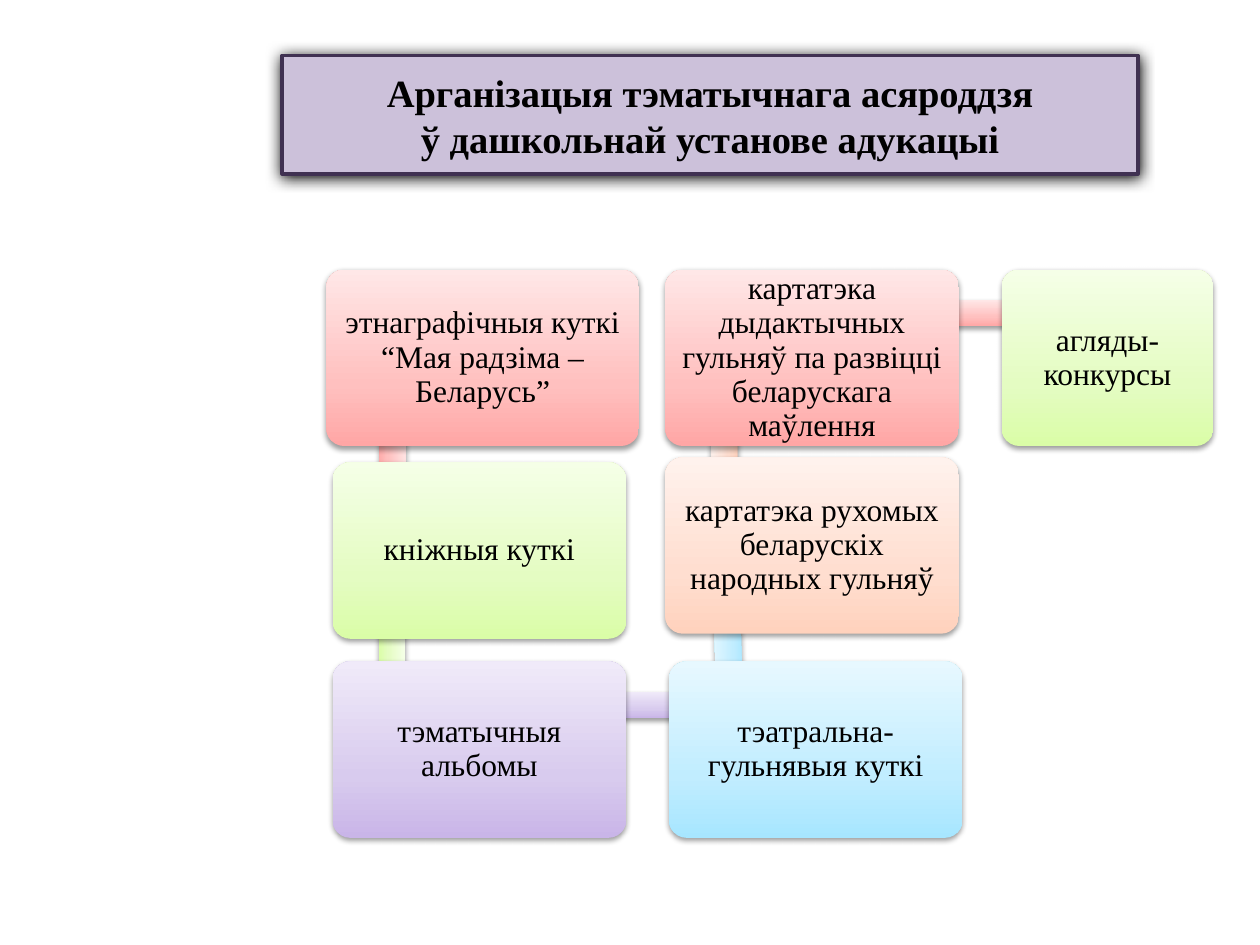
import copy

import pptx
import pptx.dml.color
import pptx.enum.shapes
import pptx.enum.text
import pptx.oxml
import pptx.oxml.ns
import pptx.util

Inches = pptx.util.Inches
Pt = pptx.util.Pt
qn = pptx.oxml.ns.qn
SHAPES = pptx.enum.shapes.MSO_SHAPE
TEXT = pptx.enum.text

FONT = "Times New Roman"
BAR_THICKNESS = 0.21
CARD_HEIGHT = 1.4

# Gradient colours from bottom to top
RED = ("FFA6A5", "FFC0BF", "FFE7E7")
GREEN = ("DAFDA7", "E4FCC2", "F5FFE7")
VIOLET = ("C9B5E8", "D8CBEE", "F0EAF9")
BLUE = ("A7E6FF", "C1EDFF", "E7F8FF")
ORANGE = ("FFD2BD", "FFDED0", "FFF2ED")

# Each step: text, card (left, top, width), gradient,
# bar to the next card (left, top, length, rotation)
STEPS = [
    ("этнаграфiчныя куткi “Мая радзіма – Беларусь”", (2.59, 2.14, 2.48), RED,
     (2.36, 3.14, 1.52, 90.8)),
    ("кнiжныя куткi", (2.64, 3.67, 2.33), GREEN, (2.33, 4.7, 1.56, 90)),
    ("тэматычныя альбомы", (2.64, 5.25, 2.33), VIOLET, (3.12, 5.49, 2.67, 0)),
    ("тэатральна-гульнявыя куткi", (5.31, 5.25, 2.33), BLUE,
     (4.97, 4.68, 1.6, 268.6)),
    ("картатэка рухомых беларускiх народных гульняў", (5.28, 3.63, 2.33), ORANGE,
     (5.01, 3.12, 1.48, 270)),
    ("картатэка дыдактычных гульняў па развіцці беларускага маўлення",
     (5.28, 2.14, 2.33), RED, (5.75, 2.38, 2.34, 0)),
    ("агляды-конкурсы", (7.95, 2.14, 1.68), GREEN, None),
]


def color(value):
    return pptx.dml.color.RGBColor.from_string(value)


def set_values(target, values):
    for name, value in values.items():
        setattr(target, name, value)


def add_shadow(shape, blur, distance, opacity):
    shape.shadow.inherit = False
    effects = shape._element.spPr.find(qn("a:effectLst"))
    effects.append(pptx.oxml.parse_xml(
        f'<a:outerShdw {pptx.oxml.ns.nsdecls("a")} blurRad="{Pt(blur)}" '
        f'dist="{Pt(distance)}" dir="5400000" rotWithShape="0">'
        f'<a:srgbClr val="000000"><a:alpha val="{opacity * 1000}"/></a:srgbClr>'
        '</a:outerShdw>'))


def fill_gradient(shape, colors):
    shape.fill.gradient()
    shape.fill.gradient_angle = 90
    stop_list = shape._element.spPr.find(qn("a:gradFill")).find(qn("a:gsLst"))
    stop_list.append(copy.deepcopy(stop_list[-1]))
    for stop, position, value in zip(shape.fill.gradient_stops, (0, 0.35, 1), colors):
        stop.position = position
        stop.color.rgb = color(value)


def write_text(shape, lines, size, bold=False, spacing=1.0):
    frame = shape.text_frame
    set_values(frame, {"word_wrap": True, "auto_size": TEXT.MSO_AUTO_SIZE.NONE,
                       "vertical_anchor": TEXT.MSO_ANCHOR.MIDDLE})
    frame.text = "\n".join(lines)
    for paragraph in frame.paragraphs:
        set_values(paragraph, {"alignment": TEXT.PP_ALIGN.CENTER,
                               "line_spacing": spacing, "space_before": Pt(0)})
        set_values(paragraph.font, {"name": FONT, "size": Pt(size), "bold": bold})
        paragraph.font.color.rgb = color("000000")


def add_block(slide, kind, box, colors):
    shape = slide.shapes.add_shape(kind, *map(Inches, box))
    fill_gradient(shape, colors)
    shape.line.fill.background()
    add_shadow(shape, 3.1, 1.6, 38)
    return shape


def add_bar(slide, left, top, length, rotation, colors):
    bar = add_block(slide, SHAPES.RECTANGLE, (left, top, length, BAR_THICKNESS), colors)
    bar.rotation = rotation


def add_card(slide, text, left, top, width, colors):
    card = add_block(slide, SHAPES.ROUNDED_RECTANGLE,
                     (left, top, width, CARD_HEIGHT), colors)
    card.adjustments[0] = 0.1
    margins = ("margin_left", "margin_top", "margin_right", "margin_bottom")
    set_values(card.text_frame, dict.fromkeys(margins, Inches(0.07)))
    write_text(card, [text], 18, spacing=0.9)


def format_title(title):
    set_values(title, {"left": Inches(2.24), "top": Inches(0.44),
                       "width": Inches(6.79), "height": Inches(0.94)})
    title.fill.solid()
    title.fill.fore_color.rgb = color("CCC1DA")
    title.line.color.rgb = color("403152")
    title.line.width = Pt(2)
    add_shadow(title, 8.5, 1, 100)
    write_text(title, ["Арганiзацыя тэматычнага асяроддзя",
                       "ў дашкольнай установе адукацыі"], 22, bold=True)


def main():
    presentation = pptx.Presentation()
    presentation.slide_width = Inches(10)
    presentation.slide_height = Inches(7.5)
    slide = presentation.slides.add_slide(presentation.slide_layouts[5])
    format_title(slide.shapes.title)

    # Each bar lies under the cards it joins
    for text, card, colors, bar in STEPS:
        if bar:
            add_bar(slide, *bar, colors)
        add_card(slide, text, *card, colors)

    presentation.save("out.pptx")


if __name__ == "__main__":
    main()
